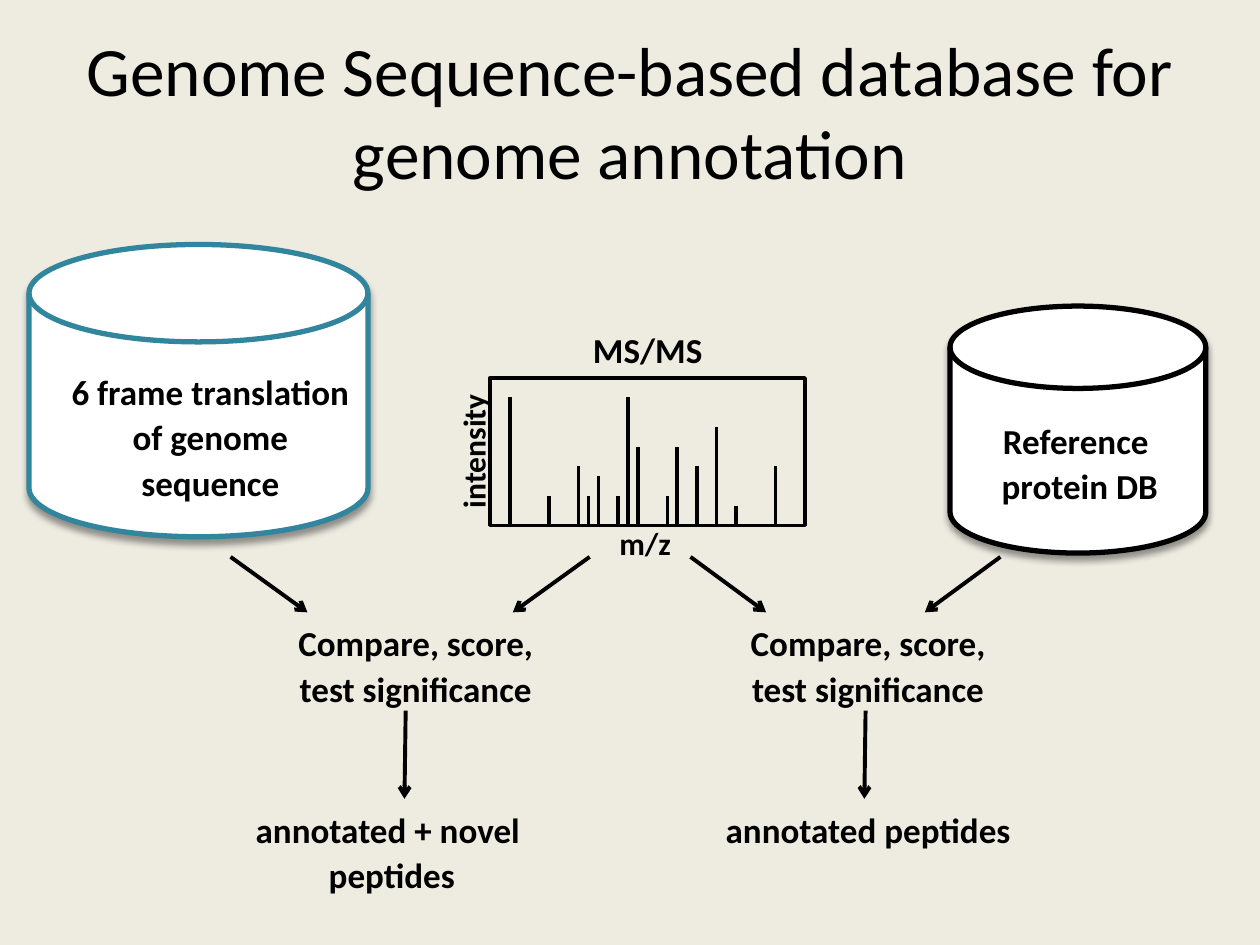
from dataclasses import dataclass

from lxml import etree
from pptx import Presentation
from pptx.dml.color import RGBColor
from pptx.enum import shapes, text
from pptx.oxml import ns
from pptx.util import Inches, Pt


@dataclass(frozen=True)
class Theme:
    font: str = "Calibri"
    background: str = "EEECE1"
    ink: str = "000000"
    paper: str = "FFFFFF"
    teal: str = "31859C"
    title: float = 39.6
    label: float = 20
    axis: float = 18
    leading: float = 26


THEME = Theme()

# Spectrum frame; peaks are (position, height) in 1/32 of its width
FRAME_X, FRAME_Y, FRAME_W, FRAME_H = 3.89, 3, 2.5, 1.17
UNIT = FRAME_W / 32
PEAKS = [(2, 13), (6, 3), (9, 6), (10, 3), (11, 5), (13, 3), (14, 13), (15, 8),
         (18, 3), (19, 8), (21, 6), (23, 10), (25, 2), (29, 6)]


def rgb(value):
    return RGBColor.from_string(value)


def add_xml(parent, tag, **attrs):
    return etree.SubElement(parent, ns.qn(tag), attrs)


def write(tf, content, size=THEME.label, bold=True, leading=None):
    """Fill a text frame with centred text, one paragraph per line."""
    for i, line in enumerate(content.split("\n")):
        p = tf.add_paragraph() if i else tf.paragraphs[0]
        p.alignment = text.PP_ALIGN.CENTER
        if leading:
            p.line_spacing = Pt(leading)
        r = p.add_run()
        r.text = line
        r.font.name = THEME.font
        r.font.size = Pt(size)
        r.font.bold = bold
        r.font.color.rgb = rgb(THEME.ink)


def add_label(parent, content, x, y, w, h, wrap=True, rotation=0, **fmt):
    sp = parent.add_textbox(Inches(x), Inches(y), Inches(w), Inches(h))
    sp.rotation = rotation
    tf = sp.text_frame
    tf.word_wrap = wrap
    tf.auto_size = text.MSO_AUTO_SIZE.SHAPE_TO_FIT_TEXT
    write(tf, content, **fmt)


def add_line(parent, x1, y1, x2, y2, width=2.0, arrow=False):
    sp = parent.add_connector(shapes.MSO_CONNECTOR.STRAIGHT, Inches(x1), Inches(y1),
                              Inches(x2), Inches(y2))
    sp.line.color.rgb = rgb(THEME.ink)
    sp.line.width = Pt(width)
    if arrow:
        add_xml(sp.line._get_or_add_ln(), "a:tailEnd", type="arrow")
    add_xml(sp._element.spPr, "a:effectLst")


def add_database(parent, x, y, w, h, color):
    sp = parent.add_shape(shapes.MSO_SHAPE.FLOWCHART_MAGNETIC_DISK, Inches(x), Inches(y),
                          Inches(w), Inches(h))
    sp.fill.solid()
    sp.fill.fore_color.rgb = rgb(THEME.paper)
    sp.line.color.rgb = rgb(color)
    sp.line.width = Pt(3)
    sp.shadow.inherit = False
    effects = sp._element.spPr.find(ns.qn("a:effectLst"))
    shadow = add_xml(effects, "a:outerShdw", blurRad=str(Pt(4)), dist=str(Pt(3)),
                     dir="5400000", rotWithShape="0")
    black = add_xml(shadow, "a:srgbClr", val=THEME.ink)
    add_xml(black, "a:alpha", val="40000")


def add_spectrum(parent):
    group = parent.add_group_shape().shapes
    frame = group.add_shape(shapes.MSO_SHAPE.RECTANGLE, Inches(FRAME_X), Inches(FRAME_Y),
                            Inches(FRAME_W), Inches(FRAME_H))
    frame.fill.background()
    frame.line.color.rgb = rgb(THEME.ink)
    frame.line.width = Pt(2)
    frame.shadow.inherit = False
    base = FRAME_Y + FRAME_H
    for position, height in PEAKS:
        x = FRAME_X + position * UNIT
        add_line(group, x, base - height * UNIT, x, base)
    add_label(group, "m/z", 4.81, 4.11, 0.62, 0.4, wrap=False, size=THEME.axis)
    add_label(group, "intensity", 3.2, 3.38, 1.11, 0.4, wrap=False, rotation=270,
              size=THEME.axis)
    add_label(group, "MS/MS", 4.6, 2.56, 1.08, 0.44, wrap=False)


def add_title(s, content):
    title = s.shapes.title
    title.left, title.top = Inches(0.5), Inches(0.25)
    title.width, title.height = Inches(9), Inches(1.25)
    tf = title.text_frame
    tf.word_wrap = True
    tf.auto_size = text.MSO_AUTO_SIZE.NONE
    tf.vertical_anchor = text.MSO_ANCHOR.MIDDLE
    write(tf, content, size=THEME.title, bold=False)


def add_search(parent, compare_x, arrow_x, inputs, result, result_x, result_h):
    """Draw one search: two input arrows, the comparison and its result."""
    for start, end in inputs:
        add_line(parent, start, 4.42, end, 4.86, width=2.25, arrow=True)
    add_label(parent, "Compare, score, test significance", compare_x, 4.86, 2.46, 0.83,
              leading=THEME.leading)
    add_line(parent, arrow_x, 5.64, arrow_x - 0.01, 6.34, width=2.25, arrow=True)
    add_label(parent, result, result_x, 6.34, 4.4, result_h, leading=THEME.leading)


def main():
    prs = Presentation()
    prs.slide_width, prs.slide_height = Inches(10), Inches(7.5)
    s = prs.slides.add_slide(prs.slide_layouts[5])
    s.background.fill.solid()
    s.background.fill.fore_color.rgb = rgb(THEME.background)
    add_title(s, "Genome Sequence-based database for genome annotation")

    add_database(s.shapes, 7.54, 2.43, 2.03, 1.96, THEME.ink)
    add_label(s.shapes, "Reference \nprotein DB", 7.34, 3.25, 2.46, 0.81,
              leading=THEME.leading)
    add_search(s.shapes, 5.66, 6.87, [(5.48, 6.08), (7.94, 7.34)],
               "annotated peptides", 4.69, 0.47)

    add_database(s.shapes, 0.23, 1.94, 2.69, 2.32, THEME.teal)
    add_label(s.shapes, "6 frame translation of genome sequence", 0.42, 2.86, 2.5, 1.19,
              leading=THEME.leading)
    add_search(s.shapes, 2.07, 3.22, [(1.83, 2.44), (4.68, 4.07)],
               "annotated + novel \npeptides", 0.91, 0.83)

    add_spectrum(s.shapes)
    prs.save("out.pptx")


if __name__ == "__main__":
    main()
